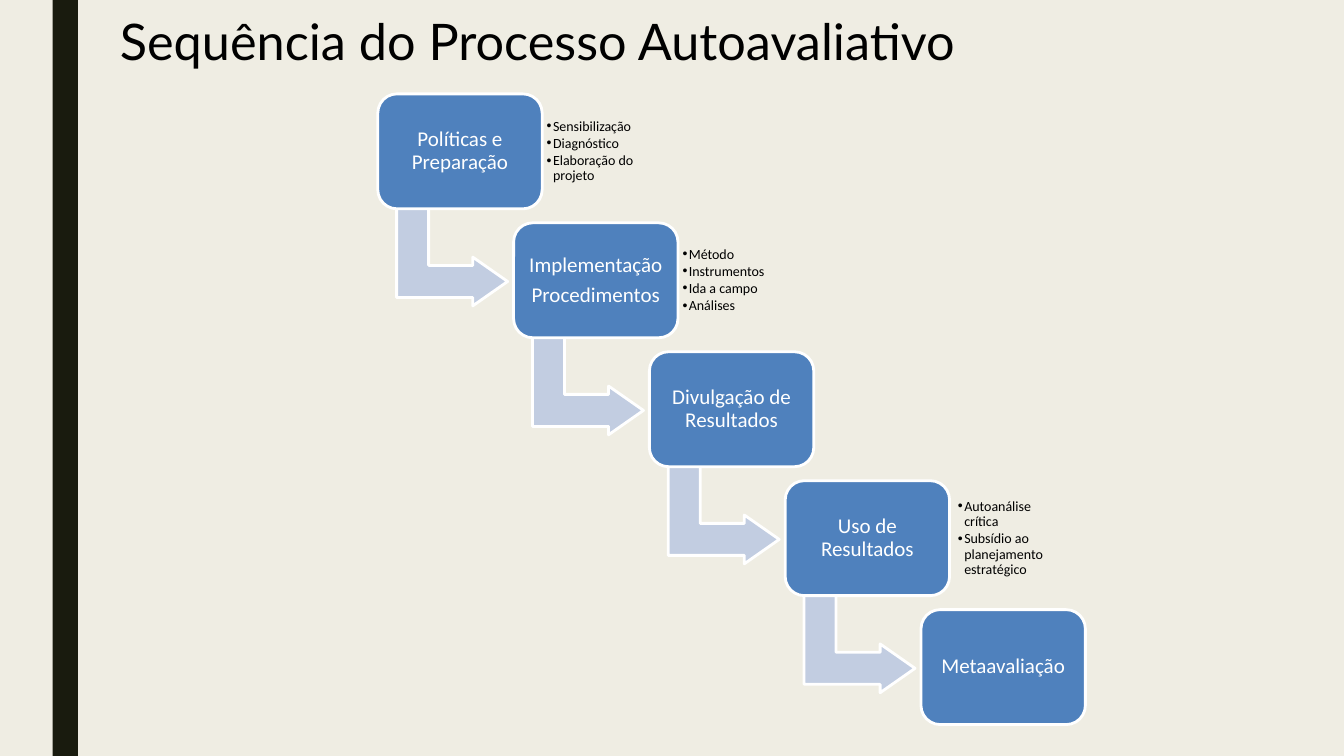
from lxml import etree
from pptx import Presentation
from pptx import util as u
from pptx.dml.color import RGBColor
from pptx.enum import shapes, text
from pptx.oxml import ns

Pt = u.Pt
CREAM = RGBColor(0xEF, 0xED, 0xE3)
OLIVE = RGBColor(0x19, 0x1B, 0x0E)
BLUE = RGBColor(0x4F, 0x81, 0xBD)
PALE_BLUE = RGBColor(0xC2, 0xCD, 0xE1)
WHITE = RGBColor(0xFF, 0xFF, 0xFF)
BLACK = RGBColor(0, 0, 0)

# Staircase geometry, in points
FIRST_LEFT, FIRST_TOP = 269.9, 67.1
STEP_X, STEP_Y = 97, 92.1
STAGE_W, STAGE_H = 117.4, 82.1
ARROW_DX, ARROW_DY, ARROW_W, ARROW_H = 18.2, 76.9, 69.7, 79.3
LIST_W, LIST_H, LIST_DY = 85.2, 66.4, 7.9

# Stage lines, placeholder index of its list, gap before the list, list items
STAGES = [
    ("Políticas e Preparação", 2, -0.5,
     ["Sensibilização", "Diagnóstico", "Elaboração do projeto"]),
    ("Implementação\nProcedimentos", 4, -0.5,
     ["Método", "Instrumentos", "Ida a campo", "Análises"]),
    ("Divulgação de Resultados", None, 0, []),
    ("Uso de Resultados", 3, 2.2,
     ["Autoanálise crítica", "Subsídio ao planejamento estratégico"]),
    ("Metaavaliação", None, 0, []),
]


class ProcessSlide:
    body_font = "Calibri"
    title_font = "Lato"

    def __init__(self, slide):
        self.slide = slide

    def place(self, part, left, top, width, height):
        part.left, part.top = Pt(left), Pt(top)
        part.width, part.height = Pt(width), Pt(height)

    def format_text(self, frame, content, size, color, font, align, margin, gap=0):
        frame.text = content
        frame.word_wrap = True
        frame.auto_size = text.MSO_AUTO_SIZE.NONE
        frame.vertical_anchor = text.MSO_ANCHOR.MIDDLE
        frame.margin_left = frame.margin_right = Pt(margin)
        frame.margin_top = frame.margin_bottom = Pt(margin)
        for paragraph in frame.paragraphs:
            paragraph.alignment = align
            paragraph.line_spacing = 0.9
            paragraph.space_before = paragraph.space_after = Pt(0)
            for run in paragraph.runs:
                run.font.name, run.font.size = font, Pt(size)
                run.font.bold = False
                run.font.color.rgb = color
        for paragraph in frame.paragraphs[:-1]:
            paragraph.space_after = Pt(gap)

    def shape(self, kind, left, top, width, height, fill, outline=None):
        part = self.slide.shapes.add_shape(
            kind, Pt(left), Pt(top), Pt(width), Pt(height))
        part.shadow.inherit = False
        part.fill.solid()
        part.fill.fore_color.rgb = fill
        if outline is None:
            part.line.fill.background()
        else:
            part.line.color.rgb = outline
            part.line.width = Pt(2)
        return part

    def title(self, content):
        heading = self.slide.shapes.title
        self.place(heading, 78.5, 3, 720.7, 51)
        self.format_text(heading.text_frame, content, 36, BLACK,
                         self.title_font, text.PP_ALIGN.LEFT, 7.2)
        heading.text_frame.paragraphs[0].line_spacing = 1.0

    def stage(self, content, left, top):
        box = self.shape(shapes.MSO_SHAPE.ROUNDED_RECTANGLE, left, top,
                         STAGE_W, STAGE_H, BLUE, WHITE)
        self.format_text(box.text_frame, content, 15, WHITE, self.body_font,
                         text.PP_ALIGN.CENTER, 4, gap=5.25)

    def arrow(self, left, top):
        bend = self.shape(shapes.MSO_SHAPE.BENT_UP_ARROW, left, top,
                          ARROW_W, ARROW_H, PALE_BLUE, WHITE)
        bend.rotation = 90
        for i, ratio in enumerate((0.328, 0.25, 0.358)):
            bend.adjustments[i] = ratio

    def bullets(self, index, items, left, top):
        details = self.slide.placeholders[index]
        self.place(details, left, top, LIST_W, LIST_H)
        self.format_text(details.text_frame, "\n".join(items), 10, BLACK,
                         self.body_font, text.PP_ALIGN.LEFT, 3.75, gap=1.5)
        for paragraph in details.text_frame.paragraphs:
            props = paragraph._p.get_or_add_pPr()
            props.set("marL", str(Pt(4.5)))
            props.set("indent", str(-Pt(4.5)))
            etree.SubElement(props, ns.qn("a:buChar")).set("char", "•")

    def remove_empty(self):
        for holder in list(self.slide.placeholders):
            if not holder.text_frame.text:
                holder._element.getparent().remove(holder._element)


def main():
    deck = Presentation()
    deck.slide_width, deck.slide_height = Pt(960), Pt(540)
    # The comparison layout offers a title and several body placeholders
    slide = deck.slides.add_slide(deck.slide_layouts[4])
    page = ProcessSlide(slide)

    # Background and side bar
    slide.background.fill.solid()
    slide.background.fill.fore_color.rgb = CREAM
    page.shape(shapes.MSO_SHAPE.RECTANGLE, 37.6, 0, 18, 540, OLIVE)

    # Title
    page.title("Sequência do Processo Autoavaliativo")

    # Descending stages with their arrows and lists
    for i, (label, index, gap, items) in enumerate(STAGES):
        left, top = FIRST_LEFT + i * STEP_X, FIRST_TOP + i * STEP_Y
        if i < len(STAGES) - 1:
            page.arrow(left + ARROW_DX, top + ARROW_DY)
        page.stage(label, left, top)
        if items:
            page.bullets(index, items, left + STAGE_W + gap, top + LIST_DY)

    page.remove_empty()
    deck.save("out.pptx")


if __name__ == "__main__":
    main()
